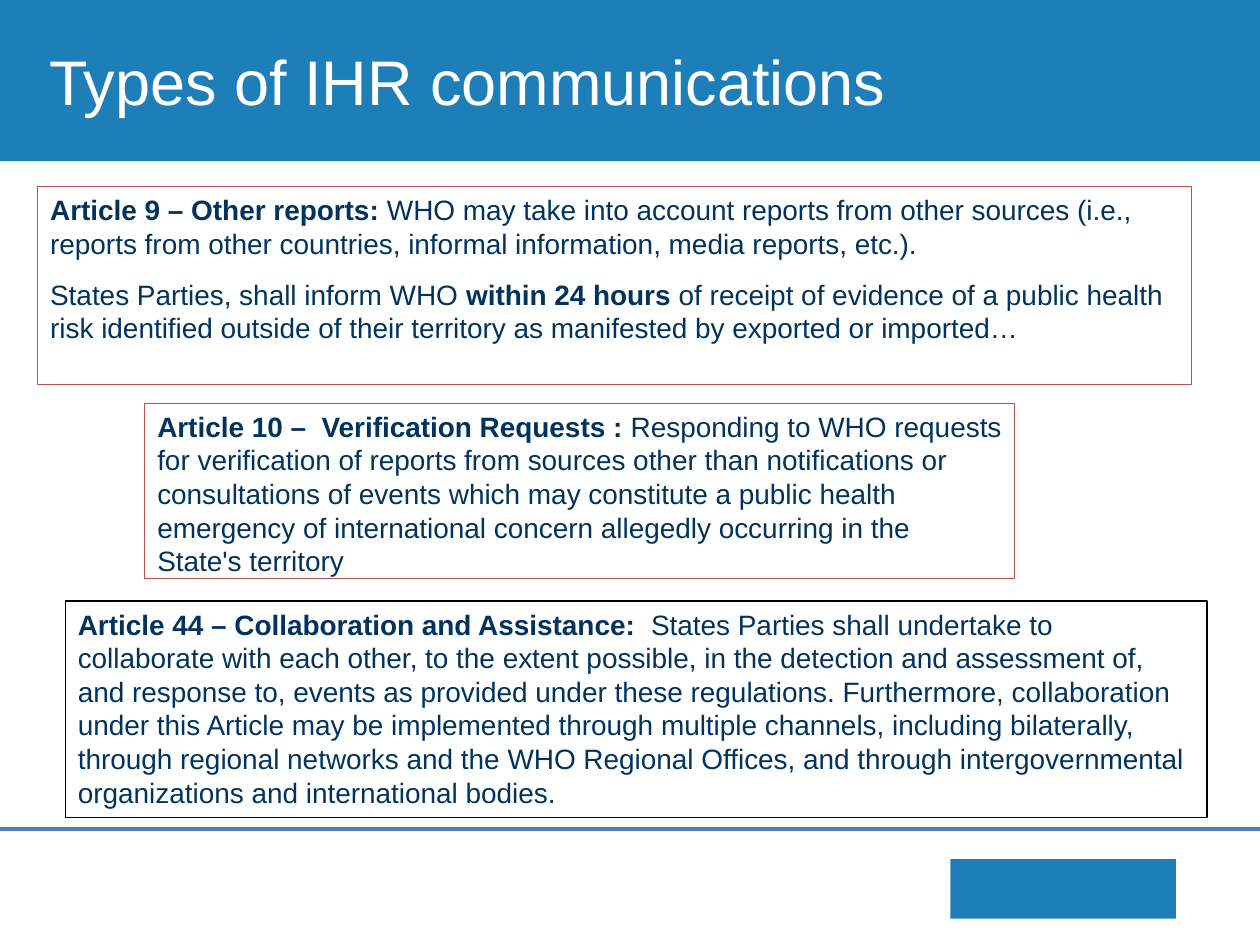
"""Build the slide on types of IHR communications."""
from dataclasses import dataclass

from lxml import etree
from pptx import Presentation
from pptx.dml.color import RGBColor
from pptx.enum import shapes, text
from pptx.oxml import ns
from pptx.util import Pt

COLOURS = {
    "banner": "1E7FB8",
    "rule": "4B7EBC",
    "red": "C0504D",
    "black": "000000",
    "body": "013360",
    "title": "FFFFFF",
}
FONT = "Arial"


@dataclass
class Span:
    words: str
    bold: bool = False


@dataclass
class Article:
    left: float
    top: float
    width: float
    height: float
    border: str
    paragraphs: list[list[Span]]
    space_after: float = 0


ARTICLES = [
    Article(82.8, 230.4, 496.8, 100.1, "red", [[
        Span("Article 10 –  Verification Requests : ", True),
        Span("Responding to WHO requests for verification of reports from sources "
             "other than notifications or consultations of events which may "
             "constitute a public health emergency of international concern "
             "allegedly occurring in the State's territory"),
    ]]),
    Article(21.6, 106.6, 659.5, 113, "red", [
        [
            Span("Article 9 – Other reports: ", True),
            Span("WHO may take into account reports from other sources (i.e., reports "
                 "from other countries, informal information, media reports, etc.)."),
        ],
        [
            Span("States Parties, shall inform WHO "),
            Span("within 24 hours ", True),
            Span("of receipt of evidence of a public health risk identified outside of "
                 "their territory as manifested by exported or imported…"),
        ],
    ], 10),
    Article(37.4, 343.4, 652.3, 123.8, "black", [[
        Span("Article 44 – Collaboration and Assistance:  ", True),
        Span("States Parties shall undertake to collaborate with each other, to the "
             "extent possible, in the detection and assessment of, and response to, "
             "events as provided under these regulations. Furthermore, collaboration "
             "under this Article may be implemented through multiple channels, "
             "including bilaterally, through regional networks and the WHO Regional "
             "Offices, and through intergovernmental organizations and international "
             "bodies."),
    ]]),
]


def colour(name: str) -> RGBColor:
    return RGBColor.from_string(COLOURS[name])


def style(para, size: float, name: str) -> None:
    para.font.name = FONT
    para.font.size = Pt(size)
    para.font.color.rgb = colour(name)


def add_block(page, left: float, top: float, width: float, height: float):
    block = page.shapes.add_shape(
        shapes.MSO_SHAPE.RECTANGLE, Pt(left), Pt(top), Pt(width), Pt(height))
    block.shadow.inherit = False
    block.fill.solid()
    block.fill.fore_color.rgb = colour("banner")
    block.line.fill.background()
    return block


def add_rule(page, top: float) -> None:
    rule = page.shapes.add_connector(
        shapes.MSO_CONNECTOR.STRAIGHT, Pt(0), Pt(top), Pt(720), Pt(top))
    rule.line.color.rgb = colour("rule")
    rule.line.width = Pt(2)
    etree.SubElement(rule._element.spPr, ns.qn("a:effectLst"))


def add_title(page, words: str) -> None:
    box = page.shapes.add_textbox(Pt(3.6), Pt(0), Pt(527), Pt(92.2))
    frame = box.text_frame
    frame.word_wrap = True
    frame.vertical_anchor = text.MSO_ANCHOR.MIDDLE
    para = frame.paragraphs[0]
    para.text = words
    para.alignment = text.PP_ALIGN.CENTER
    style(para, 36, "title")


def add_article(page, article: Article) -> None:
    box = add_block(page, article.left, article.top, article.width, article.height)
    box.fill.background()
    box.line.color.rgb = colour(article.border)
    box.line.width = Pt(0.75)
    frame = box.text_frame
    frame.word_wrap = True
    frame.vertical_anchor = text.MSO_ANCHOR.TOP
    for index, spans in enumerate(article.paragraphs):
        para = frame.add_paragraph() if index else frame.paragraphs[0]
        para.alignment = text.PP_ALIGN.LEFT
        para.space_after = Pt(article.space_after)
        style(para, 16, "body")
        for span in spans:
            run = para.add_run()
            run.text = span.words
            run.font.bold = span.bold


def main() -> None:
    deck = Presentation()
    deck.slide_width, deck.slide_height = Pt(720), Pt(540)
    page = deck.slides.add_slide(deck.slide_layouts[6])
    add_block(page, 0, -2.2, 720, 94.3)
    add_block(page, 543, 491, 129, 34)
    add_rule(page, 473.8)
    add_title(page, "Types of IHR communications")
    for article in ARTICLES:
        add_article(page, article)
    deck.save("out.pptx")


if __name__ == "__main__":
    main()
